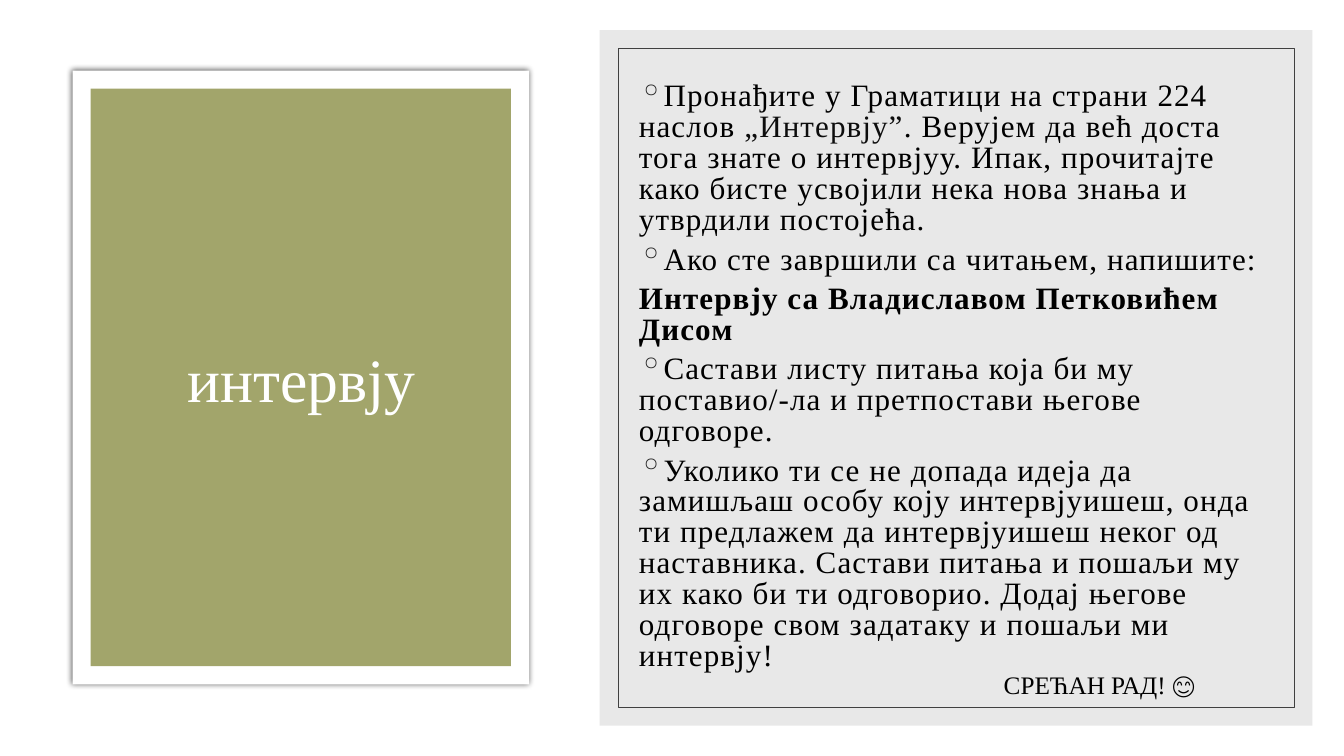
from dataclasses import dataclass

from lxml.etree import SubElement
from pptx import Presentation
from pptx.dml.color import RGBColor
from pptx.enum.shapes import MSO_SHAPE as Shape
from pptx.enum.text import MSO_ANCHOR as Anchor, PP_ALIGN as Align
from pptx.oxml.ns import qn
from pptx.util import Pt


@dataclass(frozen=True)
class Theme:
    font: str = "Times New Roman"
    white: str = "FFFFFF"
    olive: str = "A2A56B"
    panel: str = "D9D9D9"
    frame: str = "404040"
    bullet: str = "262626"
    black: str = "000000"
    quote: str = "0D0D0D"
    title_size: float = 44
    body_size: float = 22.2
    wish_size: float = 18


THEME = Theme()

# Each paragraph: (bulleted, bold, [(text, colour), ...])
TASKS = [
    (True, False, [
        ("Пронађите у Граматици на страни 224 наслов ", THEME.black),
        ("„Интервју”", THEME.quote),
        (". Верујем да већ доста тога знате о интервјуу. Ипак, прочитајте како "
         "бисте усвојили нека нова знања и утврдили постојећа.", THEME.black)]),
    (True, False, [("Ако сте завршили са читањем, напишите:", THEME.black)]),
    (False, True, [("Интервју са Владиславом Петковићем Дисом", THEME.black)]),
    (True, False, [("Састави листу питања која би му поставио/-ла и претпостави "
                    "његове одговоре.", THEME.black)]),
    (True, False, [("Уколико ти се не допада идеја да замишљаш особу коју "
                    "интервјуишеш, онда ти предлажем да интервјуишеш неког од "
                    "наставника. Састави питања и пошаљи му их како би ти "
                    "одговорио. Додај његове одговоре свом задатаку и пошаљи ми "
                    "интервју!", THEME.black)]),
]


def add_panel(slide, box, fill=None, line=None, opacity=None):
    panel = slide.shapes.add_shape(Shape.RECTANGLE, *map(Pt, box))
    panel.shadow.inherit = False
    if fill:
        panel.fill.solid()
        panel.fill.fore_color.rgb = RGBColor.from_string(fill)
    else:
        panel.fill.background()
    if line:
        panel.line.color.rgb = RGBColor.from_string(line)
        panel.line.width = Pt(0.5)
    else:
        panel.line.fill.background()
    if opacity:
        colour = panel.fill._xPr.find(".//" + qn("a:srgbClr"))
        SubElement(colour, qn("a:alpha"), val=str(opacity * 1000))
    return panel


def add_glow_shadow(panel, blur, opacity):
    effects = panel._element.spPr.find(qn("a:effectLst"))
    shadow = SubElement(effects, qn("a:outerShdw"), blurRad=str(Pt(blur)),
                        dist="0", dir="0", algn="ctr", rotWithShape="0")
    colour = SubElement(shadow, qn("a:srgbClr"), val=THEME.black)
    SubElement(colour, qn("a:alpha"), val=str(opacity * 1000))


def add_text_frame(slide, box, anchor=Anchor.TOP):
    frame = slide.shapes.add_textbox(*map(Pt, box)).text_frame
    frame.word_wrap = True
    frame.vertical_anchor = anchor
    return frame


def style_run(run, size, colour, bold=False):
    run.font.name = THEME.font
    run.font.size = Pt(size)
    run.font.bold = bold
    run.font.color.rgb = RGBColor.from_string(colour)


def add_label(slide, box, text, size, colour, align=Align.LEFT, anchor=Anchor.TOP):
    label = add_text_frame(slide, box, anchor).paragraphs[0]
    label.text = text
    label.alignment = align
    style_run(label.runs[0], size, colour)


def set_bullet(paragraph):
    props = paragraph._p.get_or_add_pPr()
    props.set("marL", "0")
    props.set("indent", str(-Pt(14.4)))
    colour = SubElement(props, qn("a:buClr"))
    SubElement(colour, qn("a:srgbClr"), val=THEME.bullet)
    SubElement(props, qn("a:buChar"), char="◦")


def add_tasks(slide, box, tasks):
    frame = add_text_frame(slide, box, Anchor.MIDDLE)
    for index, (bulleted, bold, pieces) in enumerate(tasks):
        task = frame.add_paragraph() if index else frame.paragraphs[0]
        task.line_spacing = 0.83
        task.space_after = Pt(6)
        if bulleted:
            set_bullet(task)
        for text, colour in pieces:
            run = task.add_run()
            run.text = text
            style_run(run, THEME.body_size, colour, bold)
            run.font._element.set("spc", "80")


def main():
    deck = Presentation()
    deck.slide_width, deck.slide_height = Pt(960), Pt(540)
    slide = deck.slides.add_slide(deck.slide_layouts[6])

    # Title card
    card = add_panel(slide, (51.84, 50.4, 326.16, 438.48), THEME.white)
    add_glow_shadow(card, blur=4, opacity=66)
    add_panel(slide, (64.8, 63.36, 300.24, 412.56), THEME.olive)
    add_label(slide, (77.76, 93.6, 275.04, 352.8), "интервју",
              THEME.title_size, THEME.white, Align.CENTER, Anchor.MIDDLE)

    # Task panel with inner frame
    add_panel(slide, (428.4, 21.6, 509.04, 496.8), THEME.panel, opacity=60)
    add_panel(slide, (441.36, 34.56, 483.12, 470.88), line=THEME.frame)
    add_tasks(slide, (449.28, 73.44, 464.4, 392.4), TASKS)

    # Closing wish
    add_label(slide, (709.92, 474.48, 216, 28.8), "СРЕЋАН РАД! 😊",
              THEME.wish_size, THEME.black)

    deck.save("out.pptx")


if __name__ == "__main__":
    main()
